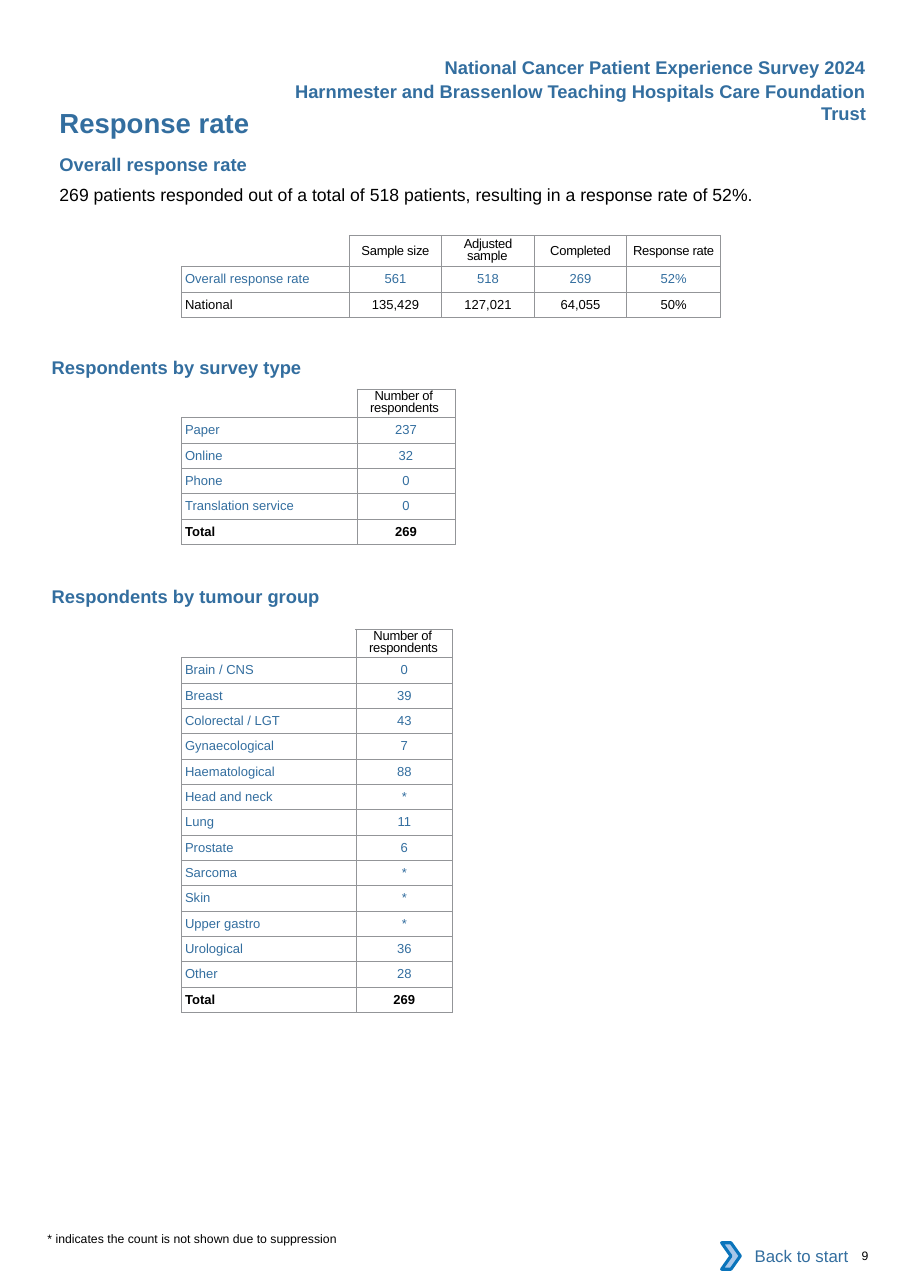
from pptx import Presentation
from pptx.dml.color import RGBColor
from pptx.enum.shapes import MSO_SHAPE as Shape
from pptx.enum.text import MSO_ANCHOR as Anchor, PP_ALIGN as Align
from pptx.oxml.xmlchemy import OxmlElement
from pptx.util import Pt

EMU_PER_PX = 9144
BLUE, BLACK, WHITE, GREY = "336E9F", "000000", "FFFFFF", "939598"
CHEVRON_FILL, CHEVRON_LINE = "A8C7E9", "0A74BB"
HEADER_HEIGHT, ROW_HEIGHT = 28, 23

OVERALL_ROWS = [
    ("", "Sample size", "Adjusted sample", "Completed", "Response rate"),
    ("Overall response rate", "561", "518", "269", "52%"),
    ("National", "135,429", "127,021", "64,055", "50%"),
]
COUNT_HEADER = ("", "Number of respondents")
SURVEY_ROWS = [
    COUNT_HEADER, ("Paper", "237"), ("Online", "32"), ("Phone", "0"),
    ("Translation service", "0"), ("Total", "269"),
]
TUMOUR_ROWS = [
    COUNT_HEADER, ("Brain / CNS", "0"), ("Breast", "39"),
    ("Colorectal / LGT", "43"), ("Gynaecological", "7"),
    ("Haematological", "88"), ("Head and neck", "*"), ("Lung", "11"),
    ("Prostate", "6"), ("Sarcoma", "*"), ("Skin", "*"),
    ("Upper gastro", "*"), ("Urological", "36"), ("Other", "28"),
    ("Total", "269"),
]
WRAPPED_INDENTS = {"Adjusted sample": (23, -3), "Number of respondents": (12, 4)}


def px(length):
    """Turn whole px into EMU."""
    return length * EMU_PER_PX


def rgb(value):
    """Turn a hex string into a colour."""
    return RGBColor.from_string(value)


def write_text(frame, text, size=12, color=BLUE, bold=False, align=Align.LEFT,
               indent=(0, 0), spacing=0, leading=None):
    """Write one formatted paragraph into a text frame."""
    paragraph = frame.paragraphs[0]
    paragraph.alignment = align
    if leading:
        paragraph.line_spacing = Pt(leading)
    left, first = indent
    properties = paragraph._p.get_or_add_pPr()
    properties.set("marL", str(px(left)))
    properties.set("indent", str(px(first)))
    if not text:
        paragraph._p.get_or_add_endParaRPr().set("sz", str(int(size * 100)))
        return
    run = paragraph.add_run()
    run.text = text
    font = run.font
    font.name, font.size, font.bold = "Arial", Pt(size), bold
    font.color.rgb = rgb(color)
    if spacing:
        run._r.get_or_add_rPr().set("spc", str(spacing))


def add_text(slide, box, text, margin=0, wrap=True, **text_format):
    """Add a text box."""
    frame = slide.shapes.add_textbox(*map(px, box)).text_frame
    frame.word_wrap = wrap
    frame.margin_left = frame.margin_right = px(margin)
    frame.margin_top = frame.margin_bottom = px(margin // 2)
    write_text(frame, text, **text_format)


def add_border(cell, side, visible):
    """Add a thin grey border, or none, on one side of a cell."""
    line = OxmlElement(f"a:ln{side}")
    line.set("w", str(Pt(0.5)))
    fill = OxmlElement("a:solidFill" if visible else "a:noFill")
    if visible:
        color = OxmlElement("a:srgbClr")
        color.set("val", GREY)
        fill.append(color)
    line.append(fill)
    cell._tc.get_or_add_tcPr().append(line)


def cell_format(row, column, text, label):
    """Return the text format of one table cell."""
    if row == 0:
        style = {"color": BLACK, "spacing": -20}
        if text in WRAPPED_INDENTS:
            return {**style, "indent": WRAPPED_INDENTS[text], "leading": 7.6}
        return {**style, "align": Align.CENTER}
    style = {"color": BLACK if label in ("National", "Total") else BLUE,
             "bold": label == "Total"}
    if column == 0:
        return {**style, "indent": (3, 0)}
    return {**style, "align": Align.CENTER}


def add_table(slide, top, widths, rows, header_height):
    """Add a bordered table whose top left corner stays open."""
    heights = [header_height] + [ROW_HEIGHT] * (len(rows) - 1)
    box = (165, top, sum(widths), sum(heights))
    table = slide.shapes.add_table(len(rows), len(widths), *map(px, box)).table
    table.first_row = table.horz_banding = False
    for column, width in zip(table.columns, widths):
        column.width = px(width)
    for row_index, (values, height) in enumerate(zip(rows, heights)):
        table.rows[row_index].height = px(height)
        for column_index, text in enumerate(values):
            cell = table.cell(row_index, column_index)
            cell.margin_left = cell.margin_right = 0
            cell.margin_top = cell.margin_bottom = 0
            cell.vertical_anchor = Anchor.MIDDLE
            corner = row_index == column_index == 0
            for side in "LRTB":
                add_border(cell, side, not corner or side in "RB")
            cell.fill.background()
            write_text(cell.text_frame, text, size=8.5,
                       **cell_format(row_index, column_index, text, values[0]))


def add_shape(group, kind, box, fill, line=None):
    """Add a filled preset shape to a group."""
    shape = group.shapes.add_shape(kind, *map(px, box))
    shape.shadow.inherit = False
    shape.fill.solid()
    shape.fill.fore_color.rgb = rgb(fill)
    if line:
        shape.line.color.rgb = rgb(line)
        shape.line.width = Pt(2)
    else:
        shape.line.fill.background()
    return shape


def add_back_button(slide):
    """Add the grouped label and chevron that lead back to the start."""
    group = slide.shapes.add_group_shape()
    label = add_shape(group, Shape.RECTANGLE, (662, 1119, 118, 42), WHITE)
    label.text_frame.vertical_anchor = Anchor.MIDDLE
    write_text(label.text_frame, "Back to start", size=11, align=Align.RIGHT)
    add_shape(group, Shape.CHEVRON, (655, 1128, 17, 24), CHEVRON_FILL, CHEVRON_LINE)


def main():
    """Build the response rate page."""
    presentation = Presentation()
    presentation.slide_width, presentation.slide_height = px(826), px(1169)
    slide = presentation.slides.add_slide(presentation.slide_layouts[6])

    banner = {"margin": 10, "wrap": False, "bold": True, "align": Align.RIGHT}
    add_text(slide, (392, 46, 404, 30),
             "National Cancer Patient Experience Survey 2024", **banner)
    add_text(slide, (229, 68, 567, 30),
             "Harnmester and Brassenlow Teaching Hospitals Care Foundation Trust", **banner)

    heading = {"bold": True, "indent": (1, 0)}
    add_text(slide, (53, 96, 413, 30), "Response rate", size=18, **heading)
    add_text(slide, (53, 139, 413, 20), "Overall response rate", **heading)
    add_text(slide, (53, 167, 720, 19),
             "269 patients responded out of a total of 518 patients, "
             "resulting in a response rate of 52%.",
             size=11.5, color=BLACK, indent=(1, 0))
    add_table(slide, 214, [152, 84, 84, 84, 85], OVERALL_ROWS, HEADER_HEIGHT)

    add_text(slide, (46, 323, 230, 20), "Respondents by survey type", **heading)
    add_table(slide, 353, [159, 89], SURVEY_ROWS, HEADER_HEIGHT - 2)

    add_text(slide, (46, 531, 246, 20), "Respondents by tumour group", **heading)
    add_table(slide, 571, [158, 88], TUMOUR_ROWS, HEADER_HEIGHT - 2)

    footer = {"size": 8, "color": BLACK}
    add_text(slide, (42, 1118, 265, 13),
             "* indicates the count is not shown due to suppression",
             indent=(1, 0), **footer)
    add_back_button(slide)
    add_text(slide, (772, 1133, 51, 13), "9", indent=(10, 0), **footer)
    presentation.save("out.pptx")


if __name__ == "__main__":
    main()
